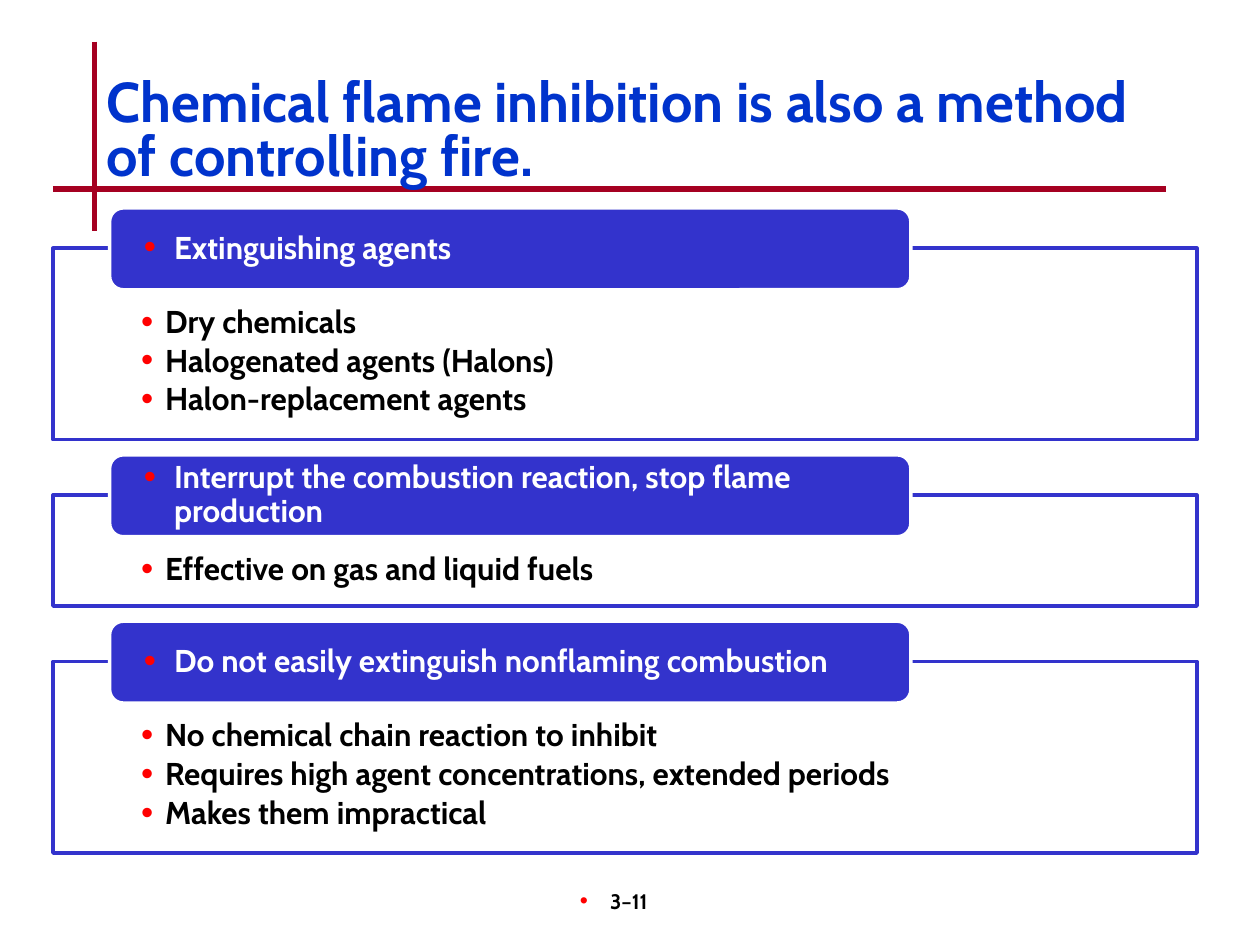
from dataclasses import dataclass

from lxml import etree
from pptx import Presentation
from pptx import util as u
from pptx.dml.color import RGBColor
from pptx.enum import shapes, text
from pptx.oxml import ns


@dataclass(frozen=True)
class Theme:
    font: str = "Cabin"
    title: str = "0033CC"
    accent: str = "3333CC"
    rule: str = "A50021"
    bullet: str = "FF0000"
    ink: str = "000000"
    paper: str = "FFFFFF"
    title_size: int = 32
    body_size: int = 18
    number_size: int = 12
    rule_width: int = 3
    border_width: int = 2


class SlideBuilder:
    def __init__(self, slide, theme):
        self.slide = slide
        self.theme = theme

    def rule(self, start, end):
        points = [u.Inches(value) for value in (*start, *end)]
        line = self.slide.shapes.add_connector(shapes.MSO_CONNECTOR.STRAIGHT, *points)
        line.line.color.rgb = RGBColor.from_string(self.theme.rule)
        line.line.width = u.Pt(self.theme.rule_width)
        etree.SubElement(line._element.spPr, ns.qn("a:effectLst"))

    def bullet(self, paragraph, hang):
        properties = paragraph._p.get_or_add_pPr()
        properties.set("marL", str(u.Inches(hang)))
        properties.set("indent", str(-u.Inches(hang)))
        color = etree.SubElement(properties, ns.qn("a:buClr"))
        etree.SubElement(color, ns.qn("a:srgbClr"), val=self.theme.bullet)
        etree.SubElement(properties, ns.qn("a:buSzPct"), val="110000")
        etree.SubElement(properties, ns.qn("a:buFont"), typeface="Arial")
        etree.SubElement(properties, ns.qn("a:buChar"), char="•")

    def fill_text(self, shape, lines, size, color, insets, anchor=text.MSO_ANCHOR.TOP,
                  align=text.PP_ALIGN.LEFT, spacing=1.0, after=0, hang=None):
        frame = shape.text_frame
        frame.word_wrap = True
        frame.vertical_anchor = anchor
        frame.margin_left, frame.margin_top, frame.margin_right, frame.margin_bottom = (
            u.Inches(inset) for inset in insets)
        frame.text = "\n".join(lines)
        for paragraph in frame.paragraphs:
            paragraph.alignment = align
            paragraph.line_spacing = spacing
            paragraph.space_after = u.Pt(after)
            if hang:
                self.bullet(paragraph, hang)
            for run in paragraph.runs:
                run.font.name = self.theme.font
                run.font.size = u.Pt(size)
                run.font.bold = True
                run.font.color.rgb = RGBColor.from_string(color)

    def text_box(self, bounds, content, size, color, insets, **style):
        box = self.slide.shapes.add_textbox(*(u.Inches(value) for value in bounds))
        self.fill_text(box, [content], size, color, insets, **style)

    def block(self, kind, bounds, fill, border):
        shape = self.slide.shapes.add_shape(kind, *(u.Inches(value) for value in bounds))
        shape.shadow.inherit = False
        shape.fill.solid()
        shape.fill.fore_color.rgb = RGBColor.from_string(fill)
        shape.line.color.rgb = RGBColor.from_string(border)
        shape.line.width = u.Pt(self.theme.border_width)
        return shape

    def section(self, top, height, heading, points):
        theme = self.theme
        panel = self.block(shapes.MSO_SHAPE.RECTANGLE, (0.42, top, 9.08, height),
                           theme.paper, theme.accent)
        self.fill_text(panel, points, theme.body_size, theme.ink, (0.7, 0.46, 0.7, 0.14),
                       spacing=0.9, after=2.7, hang=0.19)
        header = self.block(shapes.MSO_SHAPE.ROUNDED_RECTANGLE, (0.87, top - 0.32, 6.36, 0.65),
                            theme.accent, theme.paper)
        self.fill_text(header, [heading], theme.body_size, theme.paper, (0.24, 0, 0.24, 0),
                       anchor=text.MSO_ANCHOR.MIDDLE, spacing=0.9, hang=0.24)


SECTIONS = [
    ("Extinguishing agents", 1.52,
     ["Dry chemicals", "Halogenated agents (Halons)", "Halon-replacement agents"]),
    ("Interrupt the combustion reaction, stop flame production", 0.88,
     ["Effective on gas and liquid fuels"]),
    ("Do not easily extinguish nonflaming combustion", 1.52,
     ["No chemical chain reaction to inhibit",
      "Requires high agent concentrations, extended periods",
      "Makes them impractical"]),
]
SECTION_GAP = 0.44


def main():
    presentation = Presentation()
    presentation.slide_width = u.Inches(10)
    presentation.slide_height = u.Inches(7.5)
    theme = Theme()
    slide = presentation.slides.add_slide(presentation.slide_layouts[6])
    builder = SlideBuilder(slide, theme)

    builder.rule((0.75, 0.33), (0.75, 1.83))
    builder.rule((0.42, 1.5), (9.25, 1.5))
    builder.text_box((3.92, 7, 2.08, 0.5), "3–11", theme.number_size, theme.ink,
                     (0.1, 0.05, 0.28, 0.05), align=text.PP_ALIGN.CENTER, hang=0.24)
    builder.text_box((0.75, 0.56, 8.5, 1),
                     "Chemical flame inhibition is also a method of controlling fire.",
                     theme.title_size, theme.title, (0.1, 0.05, 0.1, 0.05),
                     anchor=text.MSO_ANCHOR.MIDDLE, spacing=0.8)

    top = 1.97
    for heading, height, points in SECTIONS:
        builder.section(top, height, heading, points)
        top += height + SECTION_GAP

    presentation.save("out.pptx")


if __name__ == "__main__":
    main()
